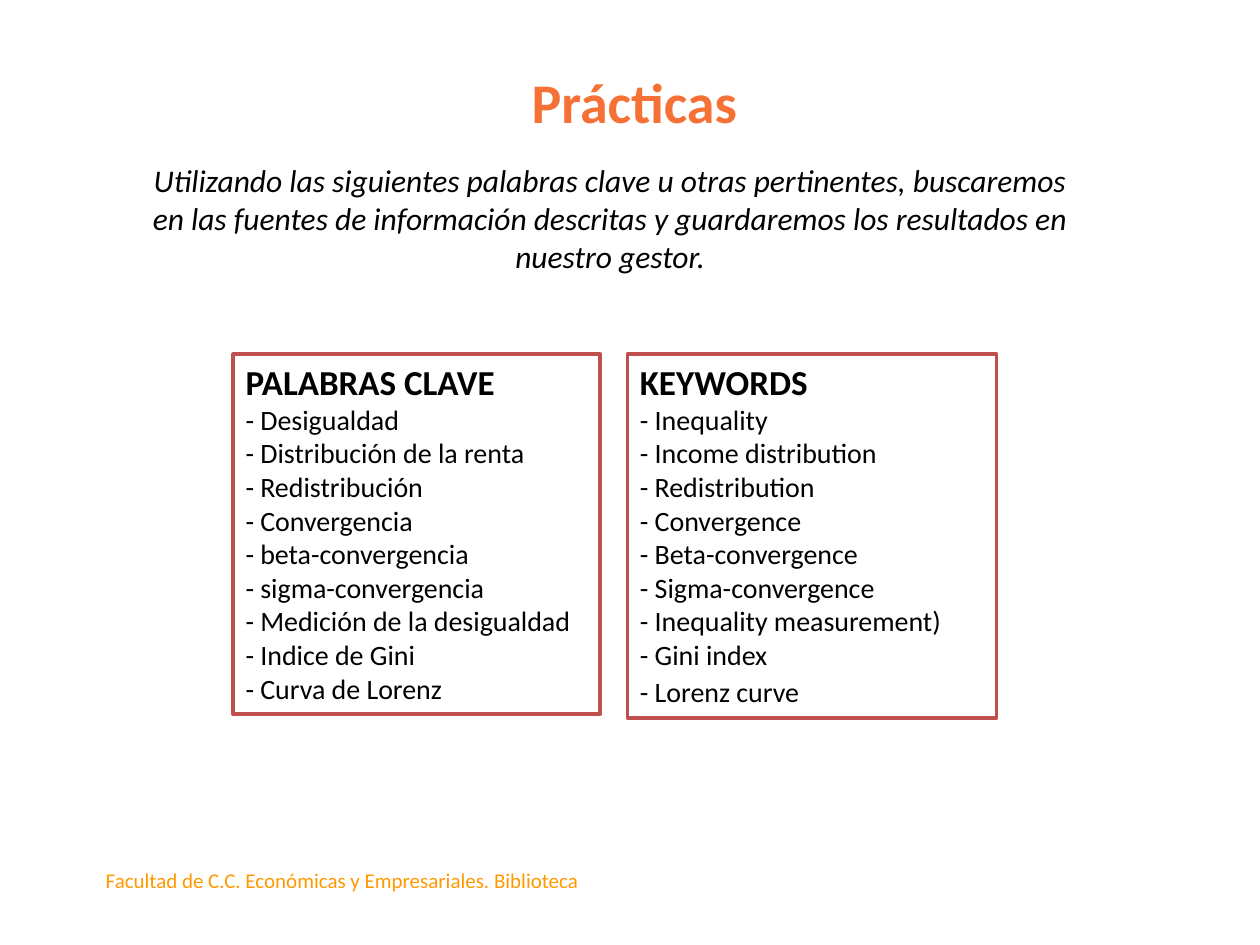
import pptx
import pptx.dml.color
import pptx.enum.shapes
import pptx.enum.text
import pptx.util

Cm = pptx.util.Cm
Pt = pptx.util.Pt
ALIGN = pptx.enum.text.PP_ALIGN
ANCHOR = pptx.enum.text.MSO_ANCHOR


def color(hex_code):
    return pptx.dml.color.RGBColor.from_string(hex_code)


class SlideBuilder:
    """Holds the text styles and the slide being filled."""

    styles = {
        "title": {"size": Pt(32), "bold": True, "color": "F67136"},
        "instructions": {"size": Pt(18), "italic": True, "color": "000000"},
        "heading": {"size": Pt(20), "bold": True, "color": "000000"},
        "item": {"size": Pt(16), "color": "000000"},
        "footer": {"size": Pt(12), "color": "FF9900"},
    }

    def __init__(self, slide):
        self.slide = slide

    def fill_paragraph(self, paragraph, text, style, alignment):
        paragraph.text = text
        paragraph.alignment = alignment
        font = paragraph.runs[0].font
        font.name = "Calibri"
        for name, value in self.styles[style].items():
            if name == "color":
                font.color.rgb = color(value)
            else:
                setattr(font, name, value)

    def text(self, text, style, left, top, width, height, anchor=ANCHOR.TOP):
        box = self.slide.shapes.add_textbox(Cm(left), Cm(top), Cm(width), Cm(height))
        box.text_frame.word_wrap = True
        box.text_frame.vertical_anchor = anchor
        self.fill_paragraph(box.text_frame.paragraphs[0], text, style, ALIGN.CENTER)

    def word_list(self, heading, words, left, top, width, height):
        """Adds a framed list and returns its last paragraph."""
        shape = self.slide.shapes.add_shape(
            pptx.enum.shapes.MSO_SHAPE.RECTANGLE,
            Cm(left), Cm(top), Cm(width), Cm(height))
        shape.shadow.inherit = False
        shape.fill.solid()
        shape.fill.fore_color.rgb = color("FFFFFF")
        shape.line.color.rgb = color("C0504D")
        shape.line.width = Pt(2)
        frame = shape.text_frame
        frame.word_wrap = True
        frame.vertical_anchor = ANCHOR.TOP
        paragraph = frame.paragraphs[0]
        self.fill_paragraph(paragraph, heading, "heading", ALIGN.LEFT)
        for word in words:
            paragraph = frame.add_paragraph()
            self.fill_paragraph(paragraph, f"- {word}", "item", ALIGN.LEFT)
        return paragraph


def main():
    presentation = pptx.Presentation()
    presentation.slide_width = Cm(25.4)
    presentation.slide_height = Cm(19.05)
    builder = SlideBuilder(presentation.slides.add_slide(presentation.slide_layouts[6]))

    builder.text("Facultad de C.C. Económicas y Empresariales. Biblioteca",
                 "footer", 1.3, 17.37, 11.2, 0.76)
    builder.text("Prácticas", "title", 2.69, 0.76, 20.2, 2.57, ANCHOR.MIDDLE)
    builder.text("Utilizando las siguientes palabras clave u otras pertinentes, "
                 "buscaremos en las fuentes de información descritas y "
                 "guardaremos los resultados en nuestro gestor.",
                 "instructions", 2.6, 3.12, 19.4, 2.57)

    list_top = 7.14
    builder.word_list(
        "PALABRAS CLAVE",
        ["Desigualdad", "Distribución de la renta", "Redistribución",
         "Convergencia", "beta-convergencia", "sigma-convergencia",
         "Medición de la desigualdad", "Indice de Gini", "Curva de Lorenz"],
        4.7, list_top, 7.4, 7.26)
    last_keyword = builder.word_list(
        "KEYWORDS",
        ["Inequality", "Income distribution", "Redistribution",
         "Convergence", "Beta-convergence", "Sigma-convergence",
         "Inequality measurement)", "Gini index", "Lorenz curve"],
        12.65, list_top, 7.44, 7.34)
    last_keyword.space_before = Pt(2)

    presentation.save("out.pptx")


if __name__ == "__main__":
    main()
